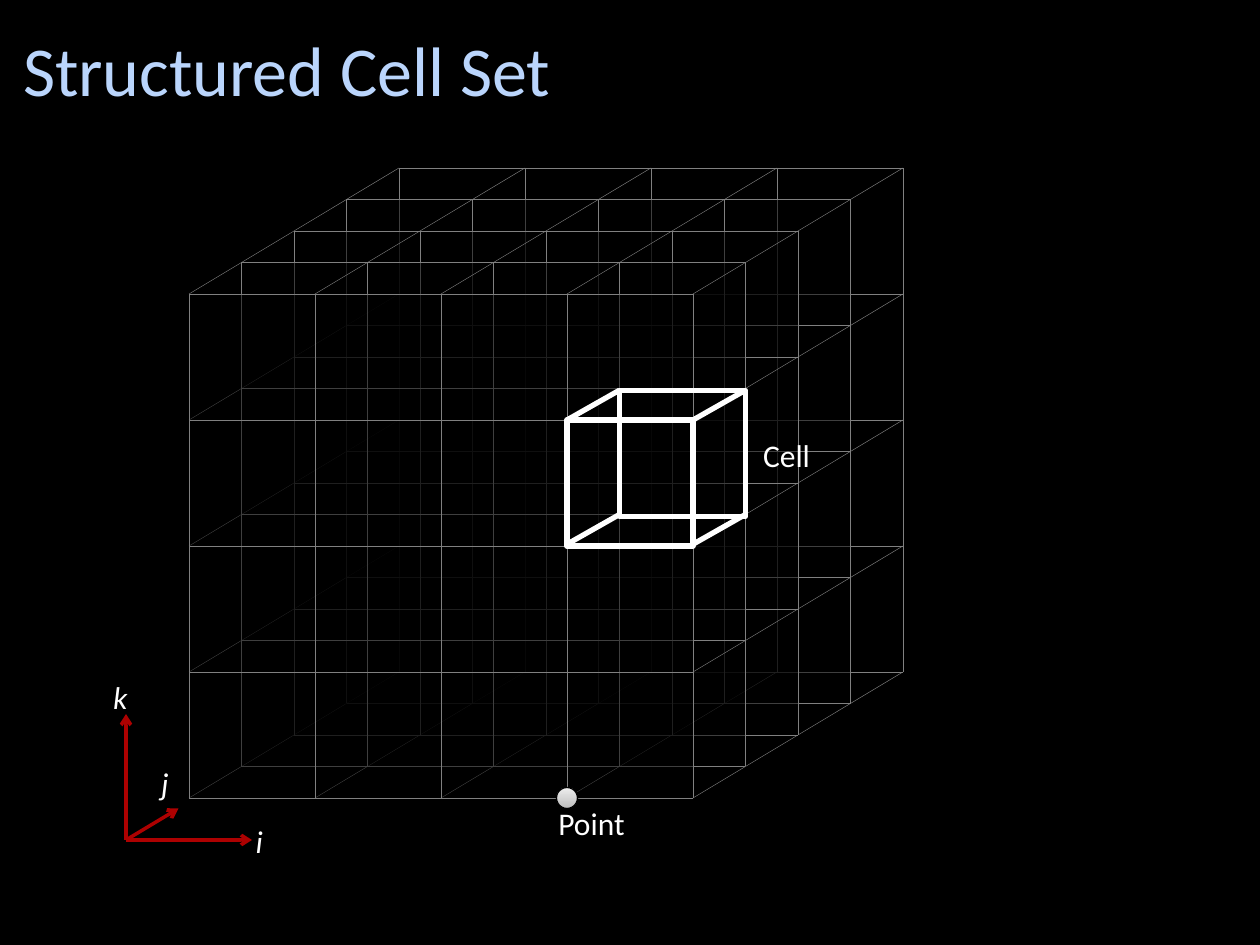
from lxml import etree
from pptx import Presentation
from pptx.dml.color import RGBColor
from pptx.enum.shapes import MSO_CONNECTOR, MSO_SHAPE
from pptx.enum.text import MSO_ANCHOR, MSO_AUTO_SIZE, PP_ALIGN
from pptx.oxml.ns import qn
from pptx.util import Pt

LINE = MSO_CONNECTOR.STRAIGHT
RECT = MSO_SHAPE.RECTANGLE
OVAL = MSO_SHAPE.OVAL
LEFT = PP_ALIGN.LEFT
MIDDLE = MSO_ANCHOR.MIDDLE
FIXED = MSO_AUTO_SIZE.NONE
GROW = MSO_AUTO_SIZE.SHAPE_TO_FIT_TEXT

N = 4                  # cells along each axis
CELL = 72              # cell edge
FRONT = (108, 168)     # top left corner of the front plane
STEP = (30, -18)       # shift of one cell in depth

BLACK, WHITE, GREY, RED, BLUE = "000000", "FFFFFF", "808080", "AD0101", "BAD5FC"


def color(code):
    return RGBColor.from_string(code)


def apply(item, **values):
    for key, value in values.items():
        setattr(item, key, value)


def style(font, code, **values):
    apply(font, name="Calibri", **values)
    font.color.rgb = color(code)


def spot(i, j, k):
    """Place of a grid node: i to the right, j into depth, k downward."""
    return (FRONT[0] + i * CELL + j * STEP[0],
            FRONT[1] + k * CELL + j * STEP[1])


def add_line(shapes, start, end, code=GREY, width=0.25, arrow=False):
    line = shapes.add_connector(LINE, *(Pt(v) for v in (*start, *end)))
    line.line.color.rgb = color(code)
    line.line.width = Pt(width)
    props = line._element.spPr
    if arrow:
        etree.SubElement(props.find(qn("a:ln")), qn("a:tailEnd"), type="arrow")
    etree.SubElement(props, qn("a:effectLst"))


def add_shape(shapes, kind, place, width, height):
    shape = shapes.add_shape(kind, *(Pt(v) for v in (*place, width, height)))
    shape.shadow.inherit = False
    return shape


def add_pane(shapes, place):
    """Half-clear black sheet that dims whatever lies behind it."""
    pane = add_shape(shapes, RECT, place, N * CELL, N * CELL)
    pane.fill.solid()
    pane.fill.fore_color.rgb = color(BLACK)
    tint = next(pane._element.spPr.iter(qn("a:srgbClr")))
    etree.SubElement(tint, qn("a:alpha"), val="50000")
    pane.line.fill.background()


def add_label(shapes, text, left, top, width, italic=False):
    box = shapes.add_textbox(Pt(left), Pt(top), Pt(width), Pt(29))
    apply(box.text_frame, text=text, word_wrap=False, auto_size=GROW)
    style(box.text_frame.paragraphs[0].font, WHITE, size=Pt(18), italic=italic)


def add_title(slide, text):
    title = slide.shapes.title
    apply(title, left=Pt(6), top=Pt(0), width=Pt(636), height=Pt(78))
    apply(title.text_frame, text=text, vertical_anchor=MIDDLE, auto_size=FIXED)
    line = title.text_frame.paragraphs[0]
    line.alignment = LEFT
    style(line.font, BLUE, size=Pt(40))


def add_grid(shapes):
    def depth(nodes):
        for i, k in nodes:
            add_line(shapes, spot(i, 0, k), spot(i, N, k))

    # Left and bottom faces
    depth([(0, k) for k in range(N + 1)] + [(i, N) for i in range(1, N + 1)])
    # Planes from back to front
    for j in range(N, -1, -1):
        add_pane(shapes, spot(0, j, 0))
        for n in range(N + 1):
            add_line(shapes, spot(n, j, 0), spot(n, j, N))
            add_line(shapes, spot(N, j, n), spot(0, j, n))
    # Top and right faces
    depth([(i, 0) for i in range(1, N + 1)] + [(N, k) for k in range(1, N)])


def add_axes(shapes):
    base = (72, 480)
    for name, dx, dy, left, top, width in (
            ("j", *STEP, 85, 433, 23),
            ("i", CELL, 0, 139, 466, 23),
            ("k", 0, -CELL, 57.5, 384, 27)):
        add_line(shapes, base, (base[0] + dx, base[1] + dy), RED, 2, True)
        add_label(shapes, name, left, top, width, True)


def add_point(shapes):
    x, y = spot(3, 0, N)
    dot = add_shape(shapes, OVAL, (x - 6, y - 6), 12, 12)
    dot.fill.gradient()
    dot.fill.gradient_angle = 90
    for stop, place, code in zip(dot.fill.gradient_stops, (0, 1),
                                 ("BDBDBD", "EEEEEE")):
        stop.position = place
        stop.color.rgb = color(code)
    dot.line.color.rgb = color(BLACK)
    dot.line.width = Pt(0.75)
    add_label(shapes, "Point", 312, 456, 55)


def add_cell(shapes):
    x, y = spot(3, 0, 1)
    dx, dy = STEP[0], -17
    for place in ((x + dx, y + dy), (x, y)):
        face = add_shape(shapes, RECT, place, CELL, CELL)
        face.fill.background()
        face.line.color.rgb = color(WHITE)
        face.line.width = Pt(3)
    for a in (x, x + CELL):
        for b in (y, y + CELL - 1):
            add_line(shapes, (a, b), (a + dx, b + dy), WHITE, 3)
    add_label(shapes, "Cell", 429, 245.5, 42)


def main():
    deck = Presentation()
    apply(deck, slide_width=Pt(720), slide_height=Pt(540))
    slide = deck.slides.add_slide(deck.slide_layouts[5])
    slide.background.fill.solid()
    slide.background.fill.fore_color.rgb = color(BLACK)
    add_title(slide, "Structured Cell Set")
    add_grid(slide.shapes.add_group_shape().shapes)
    for add in (add_axes, add_point, add_cell):
        add(slide.shapes)
    deck.save("out.pptx")


if __name__ == "__main__":
    main()
